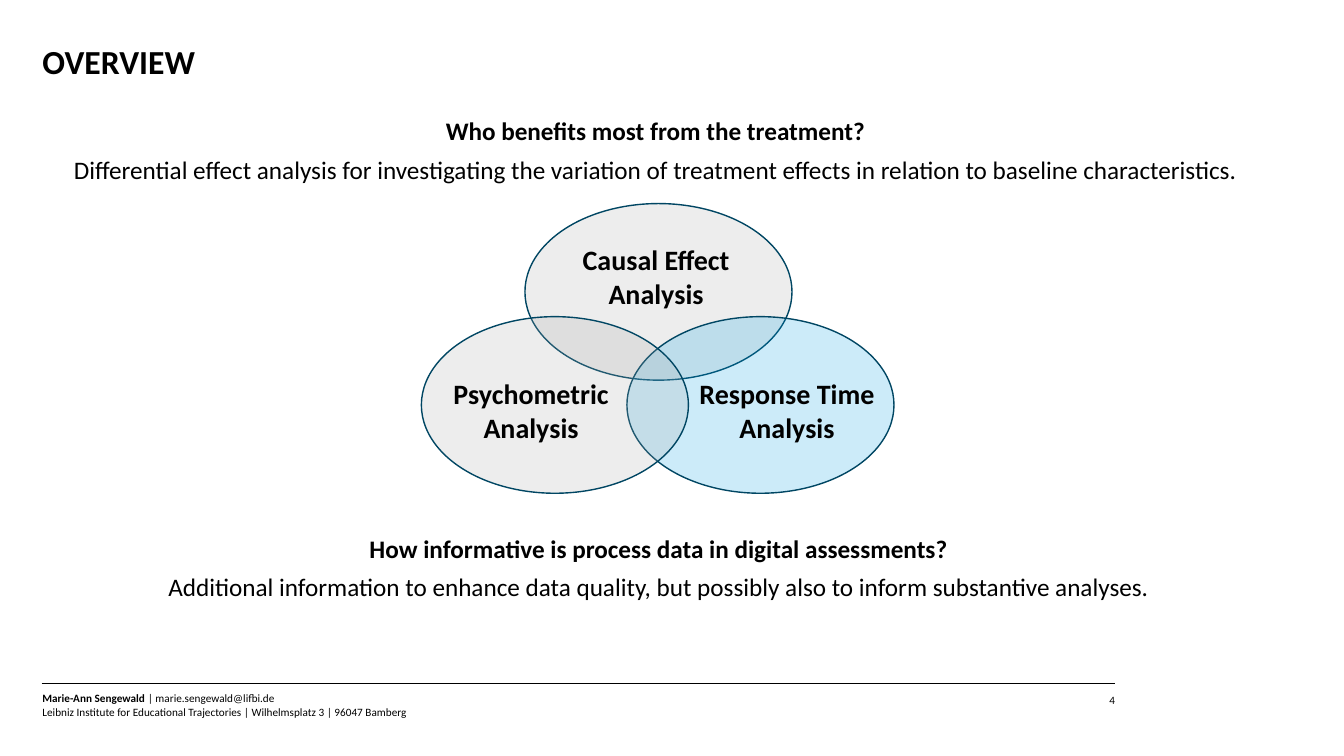
from lxml import etree
from pptx import Presentation
from pptx.dml.color import RGBColor
from pptx.enum.shapes import MSO_CONNECTOR, MSO_SHAPE
from pptx.enum.text import PP_ALIGN
from pptx.oxml.ns import qn
from pptx.util import Cm, Pt

BLACK = RGBColor(0x00, 0x00, 0x00)
NAVY = RGBColor(0x00, 0x46, 0x63)
GREY = RGBColor(0xA6, 0xA6, 0xA6)
BLUE = RGBColor(0x00, 0x9F, 0xE3)
LEFT, CENTER, RIGHT = PP_ALIGN.LEFT, PP_ALIGN.CENTER, PP_ALIGN.RIGHT
ELLIPSE, STRAIGHT = MSO_SHAPE.OVAL, MSO_CONNECTOR.STRAIGHT

prs = Presentation()
prs.slide_width, prs.slide_height = Cm(33.87), Cm(19.05)
slide = prs.slides.add_slide(prs.slide_layouts[6])


def add_text(box, paragraphs, size, align=LEFT, inset=True, space_after=0):
    """Each paragraph is a list of (text, bold) runs."""
    frame = slide.shapes.add_textbox(*map(Cm, box)).text_frame
    frame.word_wrap = True
    if not inset:
        frame.margin_left = frame.margin_right = 0
        frame.margin_top = frame.margin_bottom = 0
    for index, runs in enumerate(paragraphs):
        paragraph = frame.add_paragraph() if index else frame.paragraphs[0]
        paragraph.alignment = align
        paragraph.space_after = Pt(space_after)
        for text, bold in runs:
            run = paragraph.add_run()
            run.text = text
            run.font.name = "Calibri"
            run.font.size = Pt(size)
            run.font.bold = bold
            run.font.color.rgb = BLACK


# Footer
footer_rule = slide.shapes.add_connector(
    STRAIGHT, Cm(1.05), Cm(17.22), Cm(28.1), Cm(17.22))
footer_rule.line.color.rgb = BLACK
footer_rule.line.width = Pt(0.5)
etree.SubElement(footer_rule._element.spPr, qn("a:effectLst"))
add_text((26.5, 17.48, 1.6, 0.33), [[("4", False)]], 8, RIGHT, inset=False)
add_text((1.07, 17.43, 20.65, 0.69), [
    [("Marie-Ann Sengewald ", True), ("| marie.sengewald@lifbi.de", False)],
    [("Leibniz Institute for Educational Trajectories | "
      "Wilhelmsplatz 3 | 96047 Bamberg", False)],
], 8, inset=False)

# Overlapping analysis fields
for left, top, color in [
    (13.23, 5.13, GREY),
    (15.8, 7.98, BLUE),
    (10.62, 7.98, GREY),
]:
    field = slide.shapes.add_shape(
        ELLIPSE, Cm(left), Cm(top), Cm(6.73), Cm(4.45))
    field.shadow.inherit = False
    field.fill.solid()
    field.fill.fore_color.rgb = color
    color_element = field._element.spPr.find(qn("a:solidFill"))[0]
    etree.SubElement(color_element, qn("a:alpha"), val="20000")
    field.line.color.rgb = NAVY
    field.line.width = Pt(1)

# Title
add_text((1.07, 1.04, 27.05, 2.11), [[("OVERVIEW", True)]], 24, inset=False)

# Field labels
for left, top, lines in [
    (13.64, 5.99, ["Causal Effect Analysis"]),
    (10.49, 9.37, ["Psychometric", "Analysis"]),
    (16.94, 9.37, ["Response Time Analysis"]),
]:
    add_text((left, top, 5.79, 1.96),
             [[(line, True)] for line in lines], 20, CENTER)

# Guiding questions
for box, question, answer in [
    ((1.32, 2.79, 30.4, 2.01), "Who benefits most from the treatment?",
     "Differential effect analysis for investigating the variation of "
     "treatment effects in relation to baseline characteristics."),
    ((1.07, 13.31, 31.06, 2.01),
     "How informative is process data in digital assessments?",
     "Additional information to enhance data quality, but possibly also "
     "to inform substantive analyses."),
]:
    add_text(box, [[(question, True)], [(answer, False)]], 18, CENTER,
             space_after=6)

prs.save("out.pptx")
